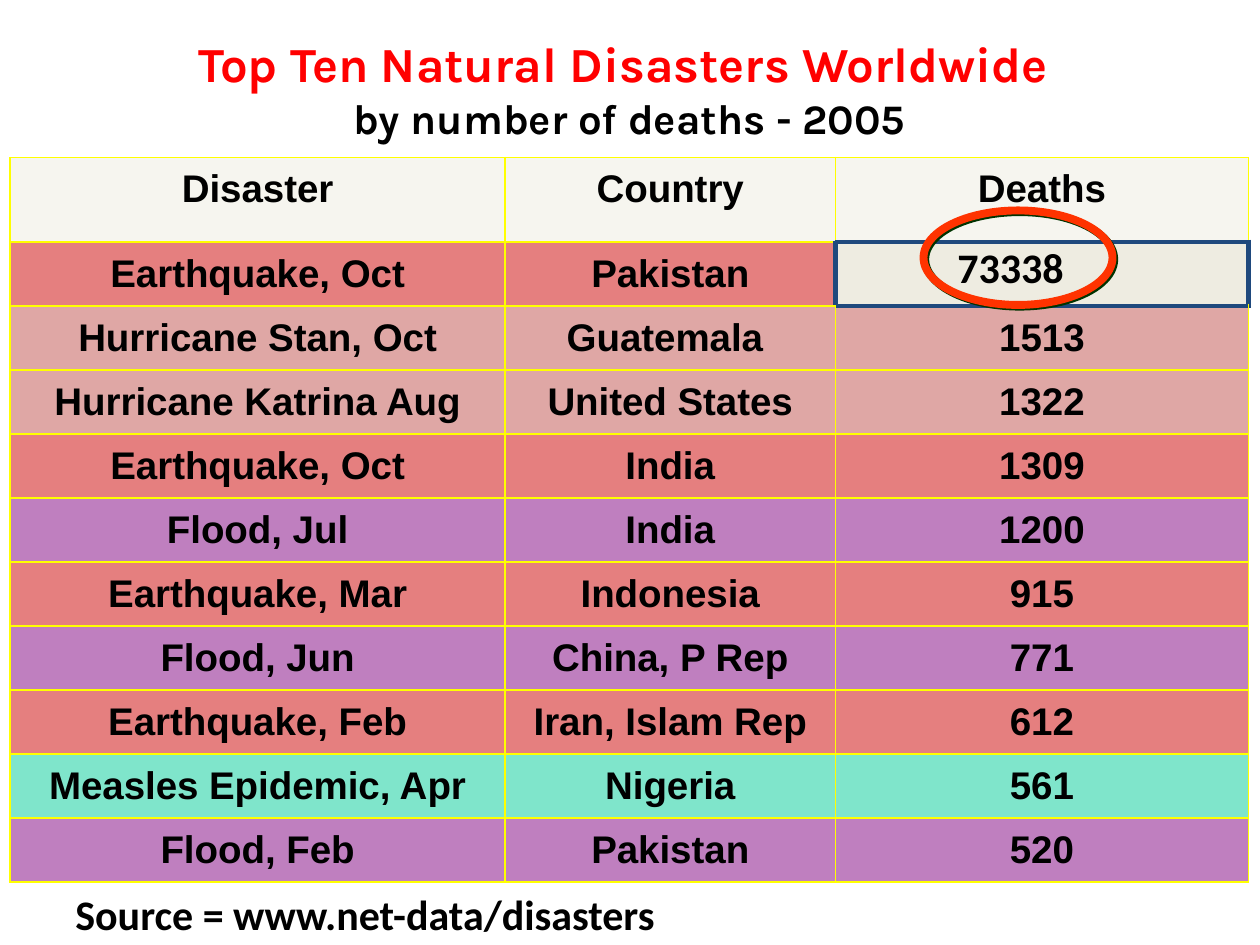
from typing import NamedTuple

from lxml import etree
from pptx import Presentation
from pptx import util as u
from pptx.dml.color import RGBColor
from pptx.enum import shapes, text
from pptx.oxml.ns import qn

HUES = {
    "head": "EEECE1", "quake": "CC0000", "storm": "C0504D", "flood": "800080",
    "plague": "00CC99", "grid": "FFFF00", "mark": "1F497D", "ring": "FF3300",
    "shade": "003300", "title": "FF0000", "ink": "000000",
}


class Event(NamedTuple):
    kind: str
    name: str
    land: str
    deaths: str


class Part(NamedTuple):
    words: str
    size: int
    face: str
    hue: str = "ink"


class Box(NamedTuple):
    left: float
    top: float
    width: float
    height: float

    def emu(self) -> list:
        return [u.Inches(side) for side in self]


ROWS = [
    Event("head", "Disaster", "Country", "Deaths"),
    Event("quake", "Earthquake, Oct", "Pakistan", ""),
    Event("storm", "Hurricane Stan, Oct", "Guatemala ", "1513"),
    Event("storm", "Hurricane Katrina Aug", "United States", "1322"),
    Event("quake", "Earthquake, Oct", "India", "1309"),
    Event("flood", "Flood, Jul", "India", "1200"),
    Event("quake", "Earthquake, Mar", "Indonesia", "915"),
    Event("flood", "Flood, Jun", "China, P Rep", "771"),
    Event("quake", "Earthquake, Feb", "Iran, Islam Rep", "612"),
    Event("plague", "Measles Epidemic, Apr", "Nigeria", "561"),
    Event("flood", "Flood, Feb", "Pakistan", "520"),
]
WIDTHS = [3.93, 2.62, 3.28]
HEAD = 0.67
MARKED = (1, 2)
SIDES = {"lnL": (0, -1), "lnR": (0, 1), "lnT": (-1, 0), "lnB": (1, 0)}


def color(key: str) -> RGBColor:
    return RGBColor.from_string(HUES[key])


def style(run, part: Part) -> None:
    font = run.font
    font.size, font.name, font.bold = u.Pt(part.size), part.face, True
    font.color.rgb = color(part.hue)


def add_edges(cell, row: int, col: int) -> None:
    """Draw the grid lines, heavier on every side that touches the marked cell."""
    props = cell._tc.get_or_add_tcPr()
    for tag, (down, right) in SIDES.items():
        near = MARKED in ((row, col), (row + down, col + right))
        width = u.Pt(3 if near else 1)
        line = etree.SubElement(props, qn(f"a:{tag}"), w=str(width))
        fill = etree.SubElement(line, qn("a:solidFill"))
        hue = HUES["mark" if near else "grid"]
        etree.SubElement(fill, qn("a:srgbClr"), val=hue)


def fill_cell(cell, key: str, clear: bool) -> None:
    cell.fill.solid()
    cell.fill.fore_color.rgb = color(key)
    if clear:
        tint = cell._tc.tcPr.find(f"{qn('a:solidFill')}/{qn('a:srgbClr')}")
        etree.SubElement(tint, qn("a:alpha"), val="50000")


def add_grid(slide, box: Box) -> None:
    frame = slide.shapes.add_table(len(ROWS), len(WIDTHS), *box.emu())
    table = frame.table
    table.first_row = table.horz_banding = False
    for col, width in zip(table.columns, WIDTHS):
        col.width = u.Inches(width)
    step = (box.height - HEAD) / (len(ROWS) - 1)
    for r, event in enumerate(ROWS):
        table.rows[r].height = u.Inches(step if r else HEAD)
        for c, words in enumerate(event[1:]):
            cell = table.cell(r, c)
            add_edges(cell, r, c)
            marked = (r, c) == MARKED
            fill_cell(cell, "head" if marked else event.kind, not marked)
            cell.text_frame.text = words
            para = cell.text_frame.paragraphs[0]
            para.alignment = text.PP_ALIGN.CENTER
            para.line_spacing = 1.1
            for run in para.runs:
                style(run, Part(words, 22, "Arial"))


def add_text(slide, box: Box, parts: list[Part], wrap: bool = True):
    """Place the parts in one paragraph, each on its own line."""
    frame = slide.shapes.add_textbox(*box.emu()).text_frame
    frame.word_wrap = wrap
    para = frame.paragraphs[0]
    para.text = "\v".join(part.words for part in parts)
    for run, part in zip(para.runs, parts):
        style(run, part)
    return para


def add_ring(slide, box: Box) -> None:
    ring = slide.shapes.add_shape(shapes.MSO_SHAPE.OVAL, *box.emu())
    ring.fill.background()
    ring.line.color.rgb = color("ring")
    ring.line.width = u.Pt(4.5)
    ring.shadow.inherit = False
    effects = ring._element.spPr.find(qn("a:effectLst"))
    shade = etree.SubElement(effects, qn("a:outerShdw"), dist=str(u.Pt(1.4)),
                             dir=str(45 * 60000), algn="ctr", rotWithShape="0")
    etree.SubElement(shade, qn("a:srgbClr"), val=HUES["shade"])


def main() -> None:
    deck = Presentation()
    deck.slide_width, deck.slide_height = u.Inches(10), u.Inches(7.5)
    slide = deck.slides.add_slide(deck.slide_layouts[6])
    add_grid(slide, Box(0.08, 1.25, 9.83, 5.75))
    title = add_text(slide, Box(0.42, 0.22, 9.15, 0.98), [
        Part("Top Ten Natural Disasters Worldwide ", 28, "Karla", "title"),
        Part("by number of deaths - 2005", 24, "Karla"),
    ])
    title.alignment = text.PP_ALIGN.CENTER
    count = add_text(slide, Box(7.5, 1.83, 1.13, 0.54),
                     [Part("73338", 24, "Calibri")], wrap=False)
    count.line_spacing = 1.1
    add_ring(slide, Box(7.33, 1.67, 1.5, 0.75))
    add_text(slide, Box(0.5, 7, 5.17, 0.5),
             [Part("Source = www.net-data/disasters", 24, "Calibri")])
    deck.save("out.pptx")


if __name__ == "__main__":
    main()
